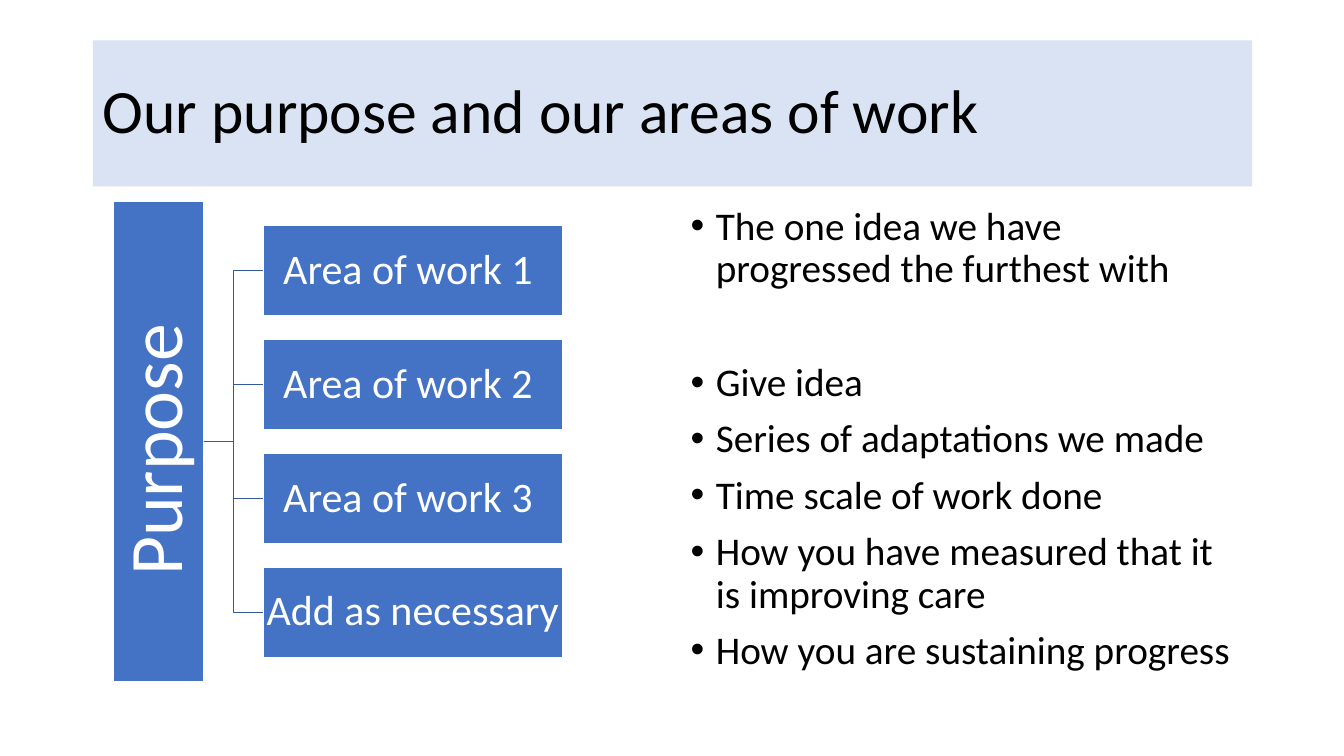
from lxml.etree import SubElement
from pptx import Presentation
from pptx.dml.color import RGBColor
from pptx.enum.shapes import MSO_CONNECTOR, MSO_SHAPE
from pptx.enum.text import MSO_ANCHOR, MSO_AUTO_SIZE, PP_ALIGN
from pptx.oxml.ns import qn
from pptx.util import Inches, Pt

AREAS = ["Area of work 1 ", "Area of work 2 ", "Area of work 3 ", "Add as necessary "]
POINTS = [
    ("The one idea we have progressed the furthest with", 10),
    ("Give idea", 51),
    ("Series of adaptations we made", 10),
    ("Time scale of work done", 10),
    ("How you have measured that it is improving care", 10),
    ("How you are sustaining progress", 10),
]


def color(value):
    """Turn a hex string into a colour."""
    return RGBColor.from_string(value)


def apply_format(target, values):
    """Set each named attribute on the target."""
    for name, value in values.items():
        setattr(target, name, value)


def place(shape, box):
    """Move a shape to a box given in inches."""
    lengths = [Inches(value) for value in box]
    apply_format(shape, dict(zip(("left", "top", "width", "height"), lengths)))


def write(paragraph, text, size, text_color, **layout):
    """Fill a paragraph with one formatted run."""
    apply_format(paragraph, {"line_spacing": 0.9, **layout})
    run = paragraph.add_run()
    run.text = text
    apply_format(run.font, {"size": Pt(size), "name": "Calibri"})
    run.font.color.rgb = color(text_color)


def add_title(slide, box):
    """Place the tinted title band."""
    title = slide.shapes.title
    place(title, box)
    title.fill.solid()
    title.fill.fore_color.rgb = color("DAE3F3")
    frame = title.text_frame
    apply_format(frame, {"vertical_anchor": MSO_ANCHOR.MIDDLE, "auto_size": MSO_AUTO_SIZE.NONE})
    write(frame.paragraphs[0], "Our purpose and our areas of work", 44, "000000",
          alignment=PP_ALIGN.LEFT)


def add_block(slide, box, text, size, inset):
    """Add a blue rectangle with centred white text."""
    block = slide.shapes.add_shape(MSO_SHAPE.RECTANGLE, *[Inches(value) for value in box])
    block.shadow.inherit = False
    block.fill.solid()
    block.fill.fore_color.rgb = color("4472C4")
    block.line.color.rgb = color("FFFFFF")
    block.line.width = Pt(1)
    frame = block.text_frame
    margins = ("margin_left", "margin_top", "margin_right", "margin_bottom")
    apply_format(frame, {"word_wrap": True, "vertical_anchor": MSO_ANCHOR.MIDDLE,
                         **dict.fromkeys(margins, Inches(inset))})
    write(frame.paragraphs[0], text, size, "FFFFFF", alignment=PP_ALIGN.CENTER)
    return block


def join(slide, parent, child):
    """Link the right side of one block to the left side of another."""
    connector = slide.shapes.add_connector(MSO_CONNECTOR.ELBOW, 0, 0, 0, 0)
    connector.begin_connect(parent, 3)
    connector.end_connect(child, 1)
    connector.line.color.rgb = color("365B9D")
    connector.line.width = Pt(1)
    SubElement(connector.element.spPr, qn("a:effectLst"))


def add_hierarchy(slide, box):
    """Draw the purpose bar and the areas of work that branch from it."""
    left, top, width, height = box
    block_height, pitch, area_offset = 0.9, 1.13, 1.49
    purpose = add_block(slide, (left, top, block_height, height), "Purpose ", 54, 0.04)
    purpose.element.txBody.bodyPr.set("vert", "vert270")
    first_top = top + (height - pitch * (len(AREAS) - 1) - block_height) / 2
    for index, text in enumerate(AREAS):
        area_box = (left + area_offset, first_top + index * pitch, width - area_offset, block_height)
        join(slide, purpose, add_block(slide, area_box, text, 30, 0.02))


def add_points(slide, box):
    """Fill the body placeholder with the bulleted list."""
    body = slide.placeholders[1]
    place(body, box)
    frame = body.text_frame
    apply_format(frame, {"vertical_anchor": MSO_ANCHOR.TOP, "auto_size": MSO_AUTO_SIZE.NONE})
    for index, (text, space) in enumerate(POINTS):
        paragraph = frame.add_paragraph() if index else frame.paragraphs[0]
        write(paragraph, text, 28, "000000", space_before=Pt(space), alignment=PP_ALIGN.LEFT)
        properties = paragraph._p.get_or_add_pPr()
        properties.set("marL", str(Inches(0.25)))
        properties.set("indent", str(-Inches(0.25)))
        SubElement(properties, qn("a:buChar"), char="•")


def main():
    """Build and save the slide."""
    presentation = Presentation()
    apply_format(presentation, {"slide_width": Inches(13.33), "slide_height": Inches(7.5)})
    slide = presentation.slides.add_slide(presentation.slide_layouts[1])
    add_title(slide, (0.92, 0.4, 11.5, 1.45))
    add_hierarchy(slide, (1.12, 2, 4.46, 4.76))
    add_points(slide, (6.75, 2, 5.67, 4.76))
    presentation.save("out.pptx")


if __name__ == "__main__":
    main()
